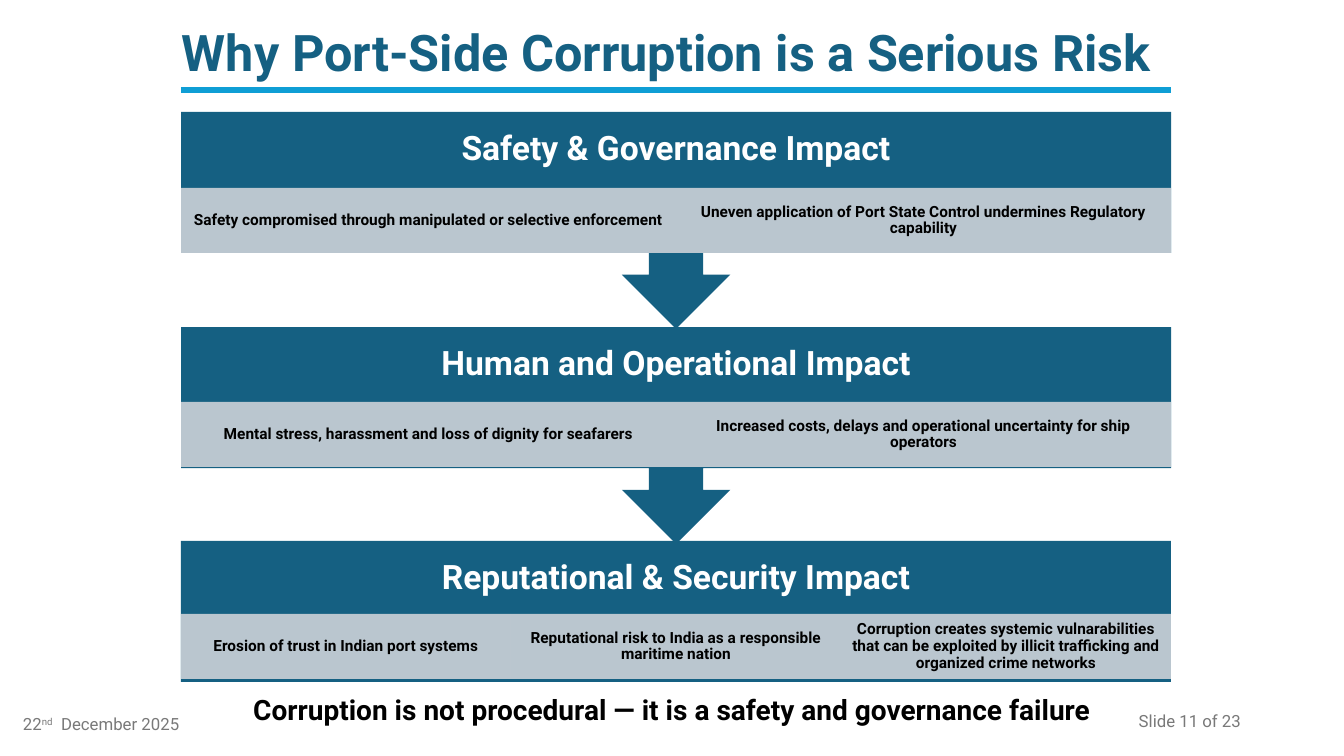
from lxml import etree
from pptx import Presentation
from pptx import util as u
from pptx.dml.color import RGBColor
from pptx.enum import shapes, text
from pptx.oxml import ns

PX = 914400 / 100.8
FONT = "Roboto"
NAVY, SKY, PALE, GREY = "156082", "0F9ED5", "CCD2D8", "797979"
LEFT, WIDTH = 181, 990
HEADING_HEIGHT, ROW_HEIGHT = 76, 65
CENTER, MIDDLE = text.PP_ALIGN.CENTER, text.MSO_ANCHOR.MIDDLE

deck = Presentation()
deck.slide_width, deck.slide_height = u.Inches(13.333), u.Inches(7.5)
page = deck.slides.add_slide(deck.slide_layouts[6])


def add_block(kind, area, fill=None):
    """Add a preset shape without line or shadow; area is in px."""
    block = page.shapes.add_shape(kind, *[round(n * PX) for n in area])
    block.shadow.inherit = False
    block.line.fill.background()
    if fill:
        block.fill.solid()
        block.fill.fore_color.rgb = RGBColor.from_string(fill)
    else:
        block.fill.background()
    return block


def write(box, spans, size, color, bold=True, align=CENTER, anchor=MIDDLE,
          spacing=1.0, insets=(10, 5)):
    """Fill a box with one paragraph of (text, baseline) spans."""
    frame = box.text_frame
    frame.word_wrap = True
    frame.vertical_anchor = anchor
    frame.margin_left = frame.margin_right = round(insets[0] * PX)
    frame.margin_top = frame.margin_bottom = round(insets[1] * PX)
    para = frame.paragraphs[0]
    para.alignment = align
    para.line_spacing = spacing
    for words, baseline in spans:
        span = para.add_run()
        span.text = words
        span.font.name, span.font.size, span.font.bold = FONT, u.Pt(size), bold
        span.font.color.rgb = RGBColor.from_string(color)
        if baseline:
            span.font._element.set("baseline", str(baseline))


RECT = shapes.MSO_SHAPE.RECTANGLE
CALLOUT = shapes.MSO_SHAPE.UP_ARROW_CALLOUT

# Date, title and rule
date = add_block(RECT, (13, 704, 302, 40))
write(date, [("22", 0), ("nd", 30000), ("  December 2025", 0)], 12, GREY,
      bold=False, align=text.PP_ALIGN.LEFT)
title = add_block(RECT, (129, 14, 1075, 82))
write(title, [("Why Port-Side Corruption is a Serious Risk", 0)], 36, NAVY, spacing=0.9)

rule = page.shapes.add_connector(
    shapes.MSO_CONNECTOR.STRAIGHT,
    *[round(n * PX) for n in (LEFT, 90, LEFT + WIDTH, 90)])
rule.line.color.rgb = RGBColor.from_string(SKY)
rule.line.width = u.Pt(4.5)
etree.SubElement(rule._element.spPr, ns.qn("a:effectLst"))

conclusion = add_block(shapes.MSO_SHAPE.ROUNDED_RECTANGLE, (129, 685, 1086, 48))
write(conclusion,
      [("Corruption is not procedural — it is a safety and governance failure", 0)],
      20, "000000", anchor=text.MSO_ANCHOR.TOP)

# Impact bands, drawn from the bottom up so each arrow overlaps the next band
bands = [
    (541, 141, 614, RECT, "Reputational & Security Impact", [
        "Erosion of trust in Indian port systems",
        "Reputational risk to India as a responsible maritime nation",
        "Corruption creates systemic vulnarabilities that can be exploited by "
        "illicit trafficking and organized crime networks"]),
    (327, 217, 402, CALLOUT, "Human and Operational Impact", [
        "Mental stress, harassment and loss of dignity for seafarers",
        "Increased costs, delays and operational uncertainty for ship operators"]),
    (112, 217, 188, CALLOUT, "Safety & Governance Impact", [
        "Safety compromised through manipulated or selective enforcement",
        "Uneven application of Port State Control undermines Regulatory capability"]),
]
for top, height, row_top, kind, heading, effects in bands:
    band = add_block(kind, (LEFT, top, WIDTH, height), NAVY)
    if kind == CALLOUT:
        band.rotation = 180
    label = add_block(RECT, (LEFT, top, WIDTH, HEADING_HEIGHT))
    write(label, [(heading, 0)], 24, "FFFFFF", spacing=0.9, insets=(19, 19))

    cell_width = WIDTH / len(effects)
    for column, effect in enumerate(effects):
        cell = add_block(
            RECT, (LEFT + column * cell_width, row_top, cell_width, ROW_HEIGHT), PALE)
        tint = cell._element.spPr.find(".//" + ns.qn("a:srgbClr"))
        etree.SubElement(tint, ns.qn("a:alpha"), val="90000")
        write(cell, [(effect, 0)], 11, "000000", spacing=0.9, insets=(9, 2))

number = add_block(RECT, (949, 701, 302, 40))
write(number, [("Slide 11 of 23", 0)], 12, GREY, bold=False,
      align=text.PP_ALIGN.RIGHT)

deck.save("out.pptx")
